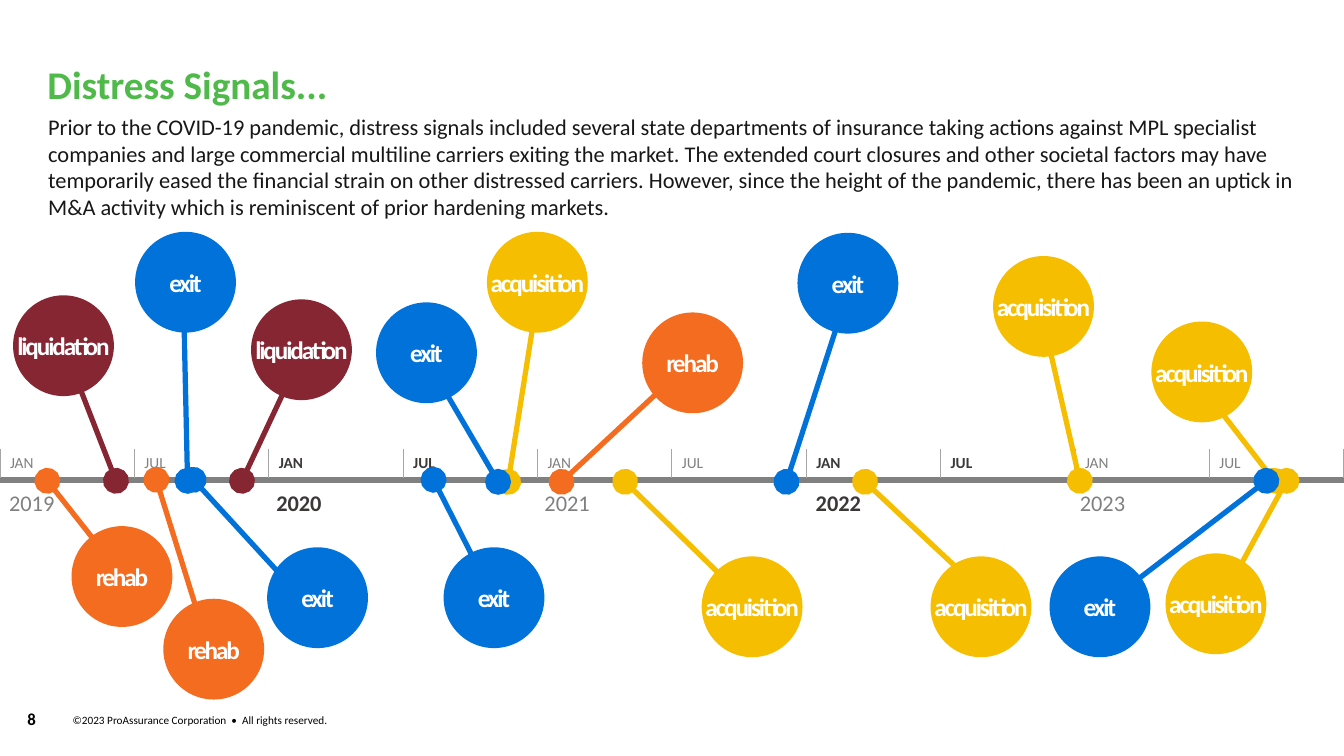
"""Build the Distress Signals timeline slide."""
from lxml.etree import SubElement
from pptx import Presentation
from pptx.dml.color import RGBColor
from pptx.enum.shapes import MSO_CONNECTOR, MSO_SHAPE
from pptx.enum.text import MSO_ANCHOR, MSO_AUTO_SIZE, PP_ALIGN
from pptx.oxml import parse_xml
from pptx.oxml.ns import nsdecls, qn
from pptx.util import Inches, Pt

BLACK = RGBColor(0x00, 0x00, 0x00)
WHITE = RGBColor(0xFF, 0xFF, 0xFF)
INK = RGBColor(0x18, 0x17, 0x17)
GREEN = RGBColor(0x4F, 0xB9, 0x4A)
GREY = RGBColor(0x80, 0x80, 0x80)
DARK = RGBColor(0x3B, 0x38, 0x38)
TICK = RGBColor(0xA6, 0xA6, 0xA6)
BLUE = RGBColor(0x00, 0x72, 0xDA)
ORANGE = RGBColor(0xF3, 0x6C, 0x20)
YELLOW = RGBColor(0xF6, 0xBE, 0x00)
MAROON = RGBColor(0x86, 0x26, 0x33)

SLIDE_WIDTH = 13.33
AXIS_Y = 4.76
DIAMETER = 1
KINDS = {
    "exit": (BLUE, 0.63),
    "rehab": (ORANGE, 0.82),
    "acquisition": (YELLOW, 1.2),
    "liquidation": (MAROON, 1.43),
}
# Each signal: kind, circle left and top, stem start, stem end on the axis.
SIGNALS = [
    ("exit", (7.91, 2.31), (8.39, 2.96), (7.8, 4.78)),
    ("rehab", (0.71, 5.22), (1.22, 5.72), (0.47, 4.77)),
    ("rehab", (6.37, 3.1), (6.85, 3.59), (5.57, 4.78)),
    ("acquisition", (4.83, 2.3), (5.33, 2.95), (5.04, 4.78)),
    ("exit", (4.4, 5.43), (4.9, 5.94), (4.3, 4.76)),
    ("rehab", (1.62, 5.94), (2.12, 6.59), (1.55, 4.76)),
    ("exit", (1.34, 2.3), (1.82, 2.95), (1.86, 4.77)),
    ("exit", (2.65, 5.43), (3.13, 6.08), (1.92, 4.76)),
    ("liquidation", (2.49, 2.97), (3.02, 3.45), (2.4, 4.77)),
    ("liquidation", (0.13, 2.93), (0.63, 3.43), (1.15, 4.77)),
    ("exit", (3.73, 3), (4.22, 3.55), (4.94, 4.78)),
    ("acquisition", (6.96, 5.52), (7.49, 6.04), (6.2, 4.78)),
    ("acquisition", (9.23, 5.52), (9.87, 5.99), (8.58, 4.78)),
    ("acquisition", (9.85, 2.54), (10.35, 3.19), (10.71, 4.77)),
    ("acquisition", (11.42, 3.19), (11.92, 3.84), (12.64, 4.77)),
    ("acquisition", (11.56, 5.49), (12.08, 6.02), (12.76, 4.77)),
    ("exit", (10.41, 5.52), (10.93, 6.02), (12.56, 4.77)),
]
YEARS = [("2019", -0.01), ("2020", 2.64), ("2021", 5.3), ("2022", 7.99), ("2023", 10.61)]
SUMMARY = (
    "Prior to the COVID-19 pandemic, distress signals included several state departments "
    "of insurance taking actions against MPL specialist companies and large commercial "
    "multiline carriers exiting the market. The extended court closures and other societal "
    "factors may have temporarily eased the financial strain on other distressed carriers. "
    "However, since the height of the pandemic, there has been an uptick in M&A activity "
    "which is reminiscent of prior hardening markets."
)


def write(frame, text, size, color, bold=False, align=PP_ALIGN.LEFT):
    paragraph = frame.paragraphs[0]
    paragraph.alignment = align
    run = paragraph.add_run()
    run.text = text
    run.font.name = "Calibri"
    run.font.size = Pt(size)
    run.font.bold = bold
    run.font.color.rgb = color
    return run


def set_frame(frame, margins, anchor):
    frame.word_wrap = True
    frame.auto_size = MSO_AUTO_SIZE.NONE
    frame.vertical_anchor = anchor
    frame.margin_left = frame.margin_right = Inches(margins[0])
    frame.margin_top = frame.margin_bottom = Inches(margins[1])


def add_text(shapes, box, text, size, color, bold=False, align=PP_ALIGN.LEFT,
             margins=(0, 0), anchor=MSO_ANCHOR.MIDDLE):
    frame = shapes.add_textbox(*map(Inches, box)).text_frame
    set_frame(frame, margins, anchor)
    return write(frame, text, size, color, bold, align)


def add_title(slide, text):
    title = slide.shapes.title
    title.left, title.top, title.width, title.height = map(Inches, (0.47, 0.48, 12.03, 0.77))
    set_frame(title.text_frame, (0, 0.1), MSO_ANCHOR.MIDDLE)
    write(title.text_frame, text, 28, GREEN, True)
    title.text_frame.paragraphs[0].line_spacing = 0.9


def add_line(shapes, start, end, color, width, dotted_end=False):
    line = shapes.add_connector(MSO_CONNECTOR.STRAIGHT, *map(Inches, start + end))
    line.line.color.rgb = color
    line.line.width = Pt(width)
    properties = line.element.spPr
    if dotted_end:
        SubElement(properties.find(qn("a:ln")), qn("a:tailEnd"), type="oval", w="lg", len="lg")
    SubElement(properties, qn("a:effectLst"))


def set_borders(cell, side_color):
    properties = cell._tc.get_or_add_tcPr()
    for index, side in enumerate("LRTB"):
        if side_color and side in "LR":
            paint = f'<a:solidFill><a:srgbClr val="{side_color}"/></a:solidFill>'
        else:
            paint = "<a:noFill/>"
        border = f'<a:ln{side} {nsdecls("a")} w="{Pt(1)}">{paint}</a:ln{side}>'
        properties.insert(index, parse_xml(border))


def add_strip(shapes, box, labels, size, side_color=None):
    table = shapes.add_table(1, len(labels), *map(Inches, box)).table
    table.first_row = table.horz_banding = False
    for cell, (text, strong) in zip(table.rows[0].cells, labels):
        cell.fill.background()
        set_borders(cell, side_color)
        write(cell.text_frame, text, size, DARK if strong else GREY, strong)


def add_scale(shapes):
    months = [(month, index % 2 == 1) for index in range(len(YEARS)) for month in ("JAN", "JUL")]
    add_strip(shapes, (0, 4.45, SLIDE_WIDTH, 0.28), months, 11, TICK)
    for index, (year, left) in enumerate(YEARS):
        add_strip(shapes, (left, 4.81, 0.73, 0.37), [(year, index % 2 == 1)], 16)


def add_signal(shapes, kind, corner, start, end):
    color, label_width = KINDS[kind]
    left, top = corner
    add_line(shapes, start, end, color, 3.75, dotted_end=True)
    bubble = shapes.add_group_shape().shapes
    circle = bubble.add_shape(MSO_SHAPE.OVAL, *map(Inches, (left, top, DIAMETER, DIAMETER)))
    circle.shadow.inherit = False
    circle.fill.solid()
    circle.fill.fore_color.rgb = color
    circle.line.fill.background()
    label_left = left + (DIAMETER - label_width) / 2
    label = add_text(bubble, (label_left, top + 0.35, label_width, 0.3), kind, 18, WHITE,
                     True, PP_ALIGN.CENTER)
    label.font._element.set("spc", "-150")


def main():
    deck = Presentation()
    deck.slide_width, deck.slide_height = Inches(SLIDE_WIDTH), Inches(7.5)
    slide = deck.slides.add_slide(deck.slide_layouts[5])
    shapes = slide.shapes
    add_title(slide, "Distress Signals...")
    add_text(shapes, (0.38, 1.07, 12.95, 1.18), SUMMARY, 16, INK,
             margins=(0.1, 0.05), anchor=MSO_ANCHOR.TOP)
    add_text(shapes, (0.72, 7.08, 4.17, 0.13),
             "©2023 ProAssurance Corporation  •  All rights reserved.", 8, BLACK)
    add_text(shapes, (-0.09, 6.98, 0.81, 0.3), "8", 12, BLACK, True, PP_ALIGN.CENTER)
    add_line(shapes, (0, AXIS_Y), (SLIDE_WIDTH, AXIS_Y), GREY, 4)
    add_scale(shapes)
    for signal in SIGNALS:
        add_signal(shapes, *signal)
    deck.save("out.pptx")


if __name__ == "__main__":
    main()
